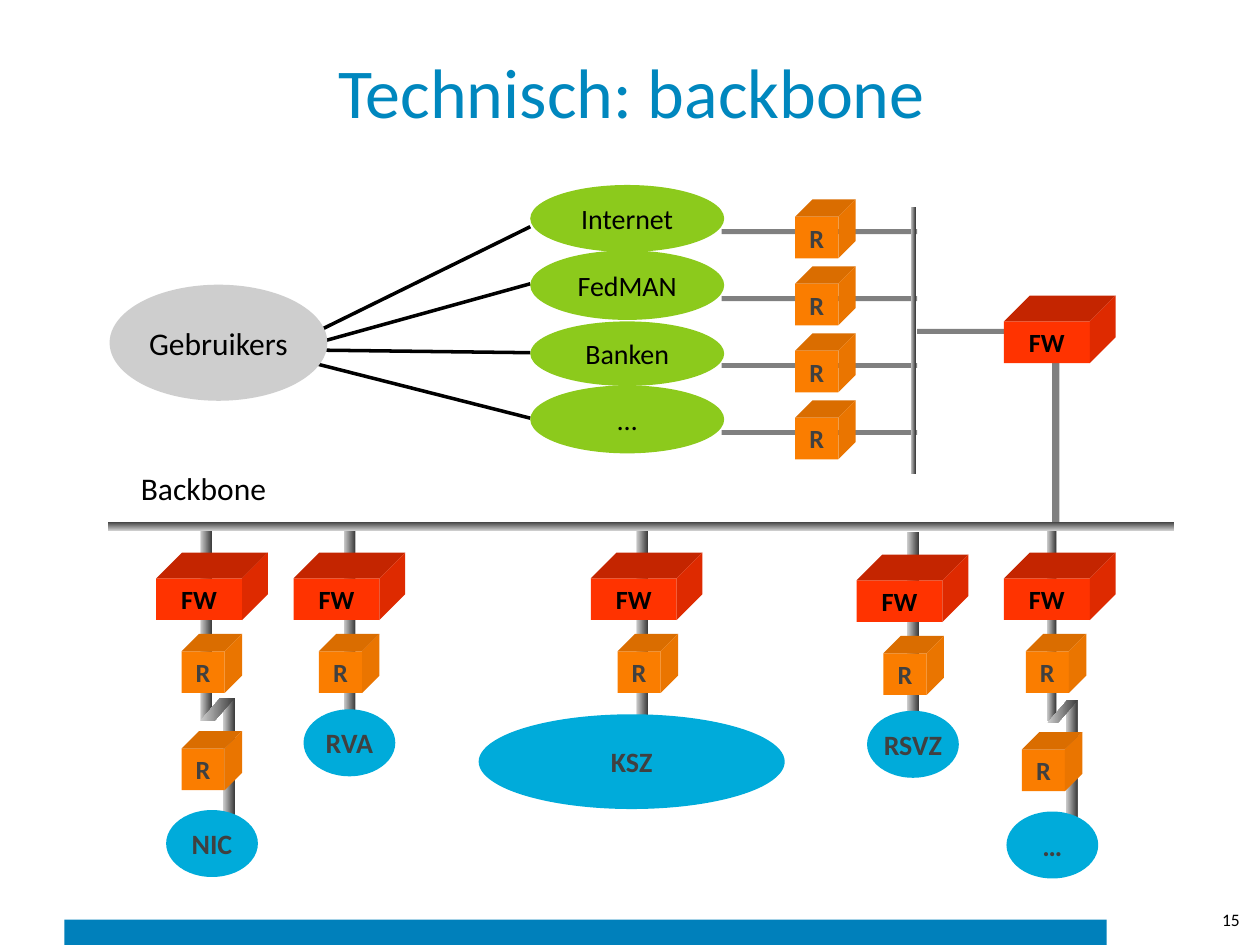
from dataclasses import dataclass

import pptx
import pptx.dml.color
import pptx.enum.shapes
import pptx.enum.text
import pptx.util
from lxml import etree
from pptx.oxml.ns import qn

Cm = pptx.util.Cm
SHAPE = pptx.enum.shapes.MSO_SHAPE
ALIGN = pptx.enum.text.PP_ALIGN
MIDDLE = pptx.enum.text.MSO_ANCHOR.MIDDLE

COLORS = {
    "title": "0087BE", "footer": "0080BB", "black": "000000", "dark": "404040",
    "cable": "808080", "pipe_light": "CECECE", "pipe_dark": "3D3D3D",
    "users": "CECECE", "network": "8CCA1C", "institution": "00ABDA",
}
LABELS = {
    "title": {"size": 40, "bold": False, "color": "title"},
    "page": {"size": 10, "bold": False, "color": "black"},
    "large": {"size": 18, "bold": False, "color": "black"},
    "network": {"size": 16, "bold": False, "color": "black"},
    "institution": {"size": 16, "bold": True, "color": "dark"},
    "firewall": {"size": 15, "bold": True, "color": "black"},
    "router": {"size": 15, "bold": True, "color": "dark"},
}


@dataclass(frozen=True)
class Device:
    label: str
    style: str
    width: float
    depth: float
    front: str
    top: str
    side: str
    height: float = 0.84


FIREWALL = Device("FW", "firewall", 1.73, 0.52, "FF3300", "C42500", "DE2A00")
ROUTER = Device("R", "router", 0.87, 0.35, "FA7D00", "DA6D00", "EA7500")


@dataclass(frozen=True)
class Network:
    name: str
    top: float
    height: float
    link_start: tuple[float, float]
    link_end: float


@dataclass(frozen=True)
class Detour:
    """Sideways step in a pipe, with a second router beside it."""
    top: float
    width: float
    pipe_left: float
    router_left: float
    router_top: float


@dataclass(frozen=True)
class Branch:
    name: str
    firewall_left: float
    router_left: float
    pipe_left: float
    oval: tuple[float, float, float, float]
    pipe_bottom: float = 14.53
    pipe_width: float = 0.23
    drop: float = 0
    detour: Detour | None = None


NETWORKS = [
    Network("Internet", 3.73, 1.35, (6.4, 6.68), 4.57),
    Network("FedMAN", 5.05, 1.4, (6.4, 6.91), 5.72),
    Network("Banken", 6.48, 1.3, (6.58, 7.06), 7.11),
    Network("…", 7.77, 1.37, (6.4, 7.34), 8.43),
]
BRANCHES = [
    Branch("NIC", 3.15, 3.66, 4.04, (3.35, 16.33, 1.85, 1.35),
           detour=Detour(14.07, 0.69, 4.5, 3.66, 15.09)),
    Branch("RVA", 5.92, 6.43, 6.93, (6.12, 14.3, 1.85, 1.35)),
    Branch("KSZ", 11.91, 12.45, 12.83, (9.65, 14.4, 6.17, 1.91), pipe_bottom=15.42),
    Branch("RSVZ", 17.27, 17.81, 18.29, (17.48, 14.33, 1.85, 1.35), drop=0.04),
    Branch("…", 20.24, 20.68, 21.11, (20.29, 16.36, 1.85, 1.35), pipe_width=0.18,
           detour=Detour(14.12, 0.61, 21.49, 20.6, 15.11)),
]


def rgb(hex_color: str) -> pptx.dml.color.RGBColor:
    return pptx.dml.color.RGBColor.from_string(hex_color)


def write(shape, text: str, style: str, align=ALIGN.CENTER, wrap=False, margins=(0.25, 0.13)):
    frame = shape.text_frame
    across, down = margins
    for name, value in {
        "text": text, "word_wrap": wrap, "vertical_anchor": MIDDLE,
        "margin_left": Cm(across), "margin_right": Cm(across),
        "margin_top": Cm(down), "margin_bottom": Cm(down),
    }.items():
        setattr(frame, name, value)
    paragraph = frame.paragraphs[0]
    paragraph.alignment = align
    look = LABELS[style]
    for name, value in {"name": "Calibri", "size": pptx.util.Pt(look["size"]),
                        "bold": look["bold"]}.items():
        setattr(paragraph.font, name, value)
    paragraph.font.color.rgb = rgb(COLORS[look["color"]])


def paint(shape, hex_color: str):
    shape.shadow.inherit = False
    shape.line.fill.background()
    shape.fill.solid()
    shape.fill.fore_color.rgb = rgb(hex_color)


def add_block(slide, kind, box, hex_color: str):
    shape = slide.shapes.add_shape(kind, *map(Cm, box))
    paint(shape, hex_color)
    return shape


def add_pipe(slide, box, kind=SHAPE.RECTANGLE, ends=("pipe_light", "pipe_dark"), angle=0):
    pipe = add_block(slide, kind, box, COLORS["cable"])
    pipe.fill.gradient()
    pipe.fill.gradient_angle = angle
    for stop, color in zip(pipe.fill.gradient_stops, ends):
        stop.color.rgb = rgb(COLORS[color])
    return pipe


def add_cable(slide, *box: float):
    add_block(slide, SHAPE.RECTANGLE, box, COLORS["cable"])


def add_oval(slide, text: str, box, color: str, style: str):
    write(add_block(slide, SHAPE.OVAL, box, COLORS[color]), text, style)


def add_device(slide, device: Device, left: float, top: float):
    """Draw a box seen at an angle; left and top belong to its front face."""
    right, bottom, depth = left + device.width, top + device.height, device.depth
    front = add_block(slide, SHAPE.RECTANGLE, (left, top, device.width, device.height),
                      device.front)
    write(front, device.label, device.style, margins=(0.2, 0.1))
    back_right = (right + depth, top - depth)
    faces = {
        device.top: [(left, top), (left + depth, top - depth), back_right, (right, top)],
        device.side: [(right, top), back_right, (right + depth, bottom - depth),
                      (right, bottom)],
    }
    for hex_color, corners in faces.items():
        points = [(Cm(x), Cm(y)) for x, y in corners]
        builder = slide.shapes.build_freeform(*points[0])
        builder.add_line_segments(points[1:], close=True)
        paint(builder.convert_to_shape(), hex_color)


def add_link(slide, start, end):
    link = slide.shapes.add_connector(pptx.enum.shapes.MSO_CONNECTOR.STRAIGHT,
                                      *map(Cm, (*start, *end)))
    link.line.width = pptx.util.Pt(2)
    link.line.color.rgb = rgb(COLORS["black"])
    etree.SubElement(link._element.spPr, qn("a:effectLst"))


def add_uplinks(slide):
    network_left, first_router, row_step = 10.69, 4.37, 1.35
    for network in NETWORKS:
        add_link(slide, network.link_start, (network_left, network.link_end))
    add_oval(slide, "Gebruikers", (2.21, 5.74, 4.39, 2.34), "users", "large")
    for row, network in enumerate(NETWORKS):
        router_top = first_router + row * row_step
        add_cable(slide, 14.55, router_top + 0.25, 3.94, 0.1)
        add_device(slide, ROUTER, 16.03, router_top)
        add_oval(slide, network.name, (network_left, network.top, 3.91, network.height),
                 "network", "network")
    add_pipe(slide, (18.36, 4.17, 0.1, 5.38))
    add_cable(slide, 18.49, 6.63, 3.94, 0.1)
    add_cable(slide, 21.21, 7.32, 0.15, 3.37)
    add_device(slide, FIREWALL, 20.24, 6.48)


def add_branch(slide, branch: Branch):
    pipe_top = 10.69 + branch.drop
    add_pipe(slide, (branch.pipe_left, pipe_top, branch.pipe_width,
                     branch.pipe_bottom - pipe_top))
    detour = branch.detour
    if detour:
        add_pipe(slide, (detour.pipe_left, detour.top, 0.23, 3.15))
        step = add_pipe(slide, (branch.pipe_left, detour.top, detour.width, 0.46),
                        SHAPE.PARALLELOGRAM)
        step.adjustments[0] = 0.88
        add_device(slide, ROUTER, detour.router_left, detour.router_top)
    add_device(slide, FIREWALL, branch.firewall_left, 11.66 + branch.drop)
    add_device(slide, ROUTER, branch.router_left, 13.13 + branch.drop)
    add_oval(slide, branch.name, branch.oval, "institution", "institution")


def main():
    deck = pptx.Presentation()
    deck.slide_width, deck.slide_height = Cm(25.4), Cm(19.05)
    slide = deck.slides.add_slide(deck.slide_layouts[5])

    add_block(slide, SHAPE.RECTANGLE, (1.3, 18.54, 21.01, 0.51), COLORS["footer"])
    title = slide.shapes.title
    for name, value in {"left": 1.3, "top": 0.53, "width": 22.86, "height": 2.57}.items():
        setattr(title, name, Cm(value))
    write(title, "Technisch: backbone", "title", wrap=True)
    page = slide.shapes.add_textbox(*map(Cm, (23.16, 18.03, 2.08, 1.02)))
    write(page, "15", "page", ALIGN.RIGHT, wrap=True)

    add_uplinks(slide)
    for branch in BRANCHES:
        add_branch(slide, branch)
    add_pipe(slide, (2.18, 10.52, 21.49, 0.18), ends=("pipe_dark", "pipe_light"), angle=270)
    backbone = slide.shapes.add_textbox(*map(Cm, (2.59, 9.32, 5.05, 1.02)))
    write(backbone, "Backbone", "large", ALIGN.LEFT, wrap=True)
    deck.save("out.pptx")


if __name__ == "__main__":
    main()
